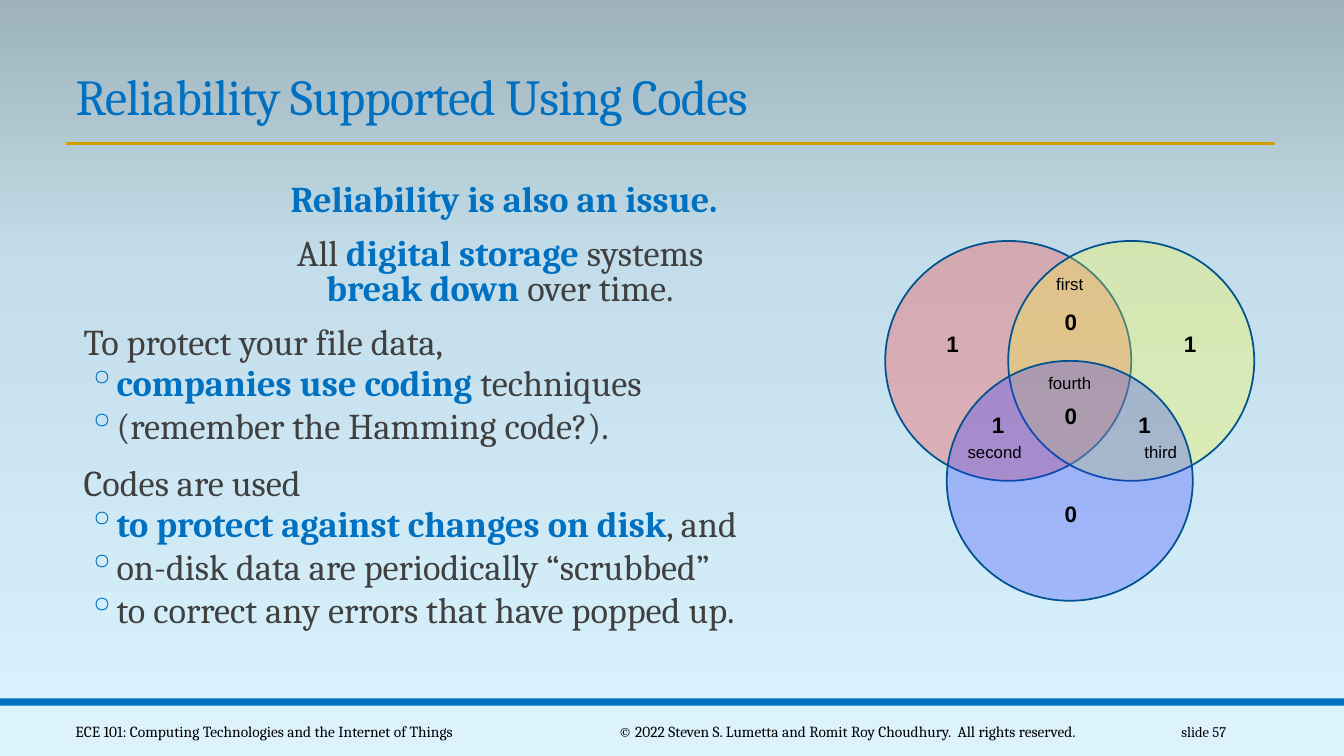
from copy import deepcopy
from dataclasses import dataclass

from lxml import etree
from pptx import Presentation
from pptx.dml.color import RGBColor
from pptx.enum.shapes import MSO_CONNECTOR, MSO_SHAPE
from pptx.enum.text import MSO_ANCHOR, MSO_AUTO_SIZE, PP_ALIGN
from pptx.oxml.ns import qn
from pptx.util import Inches, Pt

LEFT, CENTER, RIGHT = PP_ALIGN.LEFT, PP_ALIGN.CENTER, PP_ALIGN.RIGHT
MIDDLE, BOTTOM = MSO_ANCHOR.MIDDLE, MSO_ANCHOR.BOTTOM
NO_AUTOFIT = MSO_AUTO_SIZE.NONE
RECTANGLE, OVAL = MSO_SHAPE.RECTANGLE, MSO_SHAPE.OVAL
STRAIGHT = MSO_CONNECTOR.STRAIGHT


@dataclass(frozen=True)
class Theme:
    serif: str = "Cambria"
    sans: str = "Arial"
    accent: str = "0070C0"
    body: str = "404040"
    black: str = "000000"
    rule: str = "D09E00"
    footer: str = "DCF3FD"
    outline: str = "00538E"
    background: tuple = ((0, "DAF4FF"), (0.65, "C3DEEA"), (1, "9DB2BA"))
    title_size: float = 36
    body_size: float = 25.9
    footer_size: float = 11
    number_size: float = 10.5
    bit_size: float = 16
    label_size: float = 12


THEME = Theme()
WIDTH, HEIGHT = 13.33, 7.5
MARGIN = 0.65
FOOTER_TOP = 7.0
BAND = 0.07
RADIUS_X, RADIUS_Y = 1.22, 1.19
VENN_X, VENN_Y = 10.61, 3.58

CIRCLES = [(-0.5, 0, "FE3232"), (0.5, 0, "FBFB35"), (0, 1, "313BFF")]
BITS = [
    ("1", -0.96, -0.14), ("1", 0.97, -0.14), ("0", 0, 1.27),
    ("1", -0.59, 0.53), ("1", 0.6, 0.53), ("0", 0, 0.46), ("0", 0, -0.33),
]
LABELS = [
    ("first", 0, -0.64, 0.5), ("second", -0.61, 0.76, 0.87),
    ("third", 0.74, 0.76, 0.58), ("fourth", 0, 0.18, 0.71),
]
BODY = [
    ("center", "**Reliability is also an issue.**"),
    ("center", "All **digital storage **systems \v**break down **over time."),
    ("lead", "To protect your file data,"),
    ("bullet", "**companies use coding** techniques"),
    ("bullet", "(remember the Hamming code?)."),
    ("lead", "Codes are used"),
    ("bullet", "**to protect against changes on disk**, and"),
    ("bullet", "on-disk data are periodically “scrubbed”"),
    ("bullet", "to correct any errors that have popped up."),
]
FOOTERS = [
    ("slide 57", 10.83, 1.43, RIGHT, THEME.number_size),
    ("ECE 101: Computing Technologies and the Internet of Things",
     MARGIN, 4.58, LEFT, THEME.footer_size),
    ("© 2022 Steven S. Lumetta and Romit Roy Choudhury.  All rights reserved.",
     5.46, 5.89, CENTER, THEME.footer_size),
]


def rgb(value):
    return RGBColor.from_string(value)


def set_font(font, size, color, name=THEME.serif, bold=False):
    font.name, font.size, font.bold = name, Pt(size), bold
    font.color.rgb = rgb(color)


def paint_background(slide):
    fill = slide.background.fill
    fill.gradient()
    fill.gradient_angle = 90
    stop_list = slide.element.find(".//" + qn("a:gsLst"))
    stop_list.append(deepcopy(stop_list[0]))
    for stop, (position, color) in zip(fill.gradient_stops, THEME.background):
        stop.position = position
        stop.color.rgb = rgb(color)


def add_filled(shapes, kind, left, top, width, height, color):
    shape = shapes.add_shape(kind, Inches(left), Inches(top), Inches(width), Inches(height))
    shape.shadow.inherit = False
    shape.fill.solid()
    shape.fill.fore_color.rgb = rgb(color)
    shape.line.fill.background()
    return shape


def add_rule(slide, left, right, top):
    rule = slide.shapes.add_connector(
        STRAIGHT, Inches(left), Inches(top), Inches(right), Inches(top))
    rule.line.color.rgb = rgb(THEME.rule)
    rule.line.width = Pt(2)
    etree.SubElement(rule.element.spPr, qn("a:effectLst"))


def format_title(slide, text):
    title = slide.shapes.title
    title.left, title.top = Inches(MARGIN), Inches(0.59)
    title.width, title.height = Inches(WIDTH - 2 * MARGIN), Inches(0.71)
    frame = title.text_frame
    frame.text = text
    frame.auto_size = NO_AUTOFIT
    frame.vertical_anchor = BOTTOM
    paragraph = frame.paragraphs[0]
    paragraph.alignment = LEFT
    paragraph.line_spacing = 0.85
    set_font(paragraph.font, THEME.title_size, THEME.accent)
    paragraph.runs[0].font.size = Pt(THEME.title_size)
    paragraph.runs[0].font._element.set("spc", "-50")


def add_bullet(paragraph, symbol, margin, indent):
    properties = paragraph._p.get_or_add_pPr()
    properties.set("marL", str(Inches(margin)))
    properties.set("indent", str(Inches(-indent)))
    color = etree.SubElement(properties, qn("a:buClr"))
    etree.SubElement(color, qn("a:srgbClr")).set("val", THEME.accent)
    etree.SubElement(properties, qn("a:buChar")).set("char", symbol)


def add_marked_runs(paragraph, text):
    for index, part in enumerate(text.split("**")):
        strong = index % 2 == 1
        for line_index, piece in enumerate(part.split("\v")):
            if line_index:
                paragraph.add_line_break()
            if piece:
                run = paragraph.add_run()
                run.text = piece
                run.font.bold = strong
                run.font.color.rgb = rgb(THEME.accent if strong else THEME.body)


def add_body(slide):
    box = slide.shapes.add_textbox(Inches(MARGIN), Inches(1.78), Inches(8.52), Inches(4.64))
    frame = box.text_frame
    frame.word_wrap = True
    frame.margin_left = frame.margin_right = 0
    for index, (kind, text) in enumerate(BODY):
        paragraph = frame.paragraphs[0] if index == 0 else frame.add_paragraph()
        bulleted = kind == "bullet"
        if bulleted:
            paragraph.level = 1
            add_bullet(paragraph, "◦", 0.42, 0.2)
        else:
            add_bullet(paragraph, " ", 0.1, 0.1)
        paragraph.alignment = CENTER if kind == "center" else LEFT
        paragraph.line_spacing = 0.8
        if index:
            paragraph.space_before = Pt(2 if bulleted else 12)
        paragraph.space_after = Pt(4 if bulleted else 2)
        set_font(paragraph.font, THEME.body_size, THEME.body)
        add_marked_runs(paragraph, text)


def add_text(shapes, text, left, top, width, height, alignment, wrap=True, **font):
    box = shapes.add_textbox(Inches(left), Inches(top), Inches(width), Inches(height))
    frame = box.text_frame
    frame.text = text
    frame.word_wrap = wrap
    frame.vertical_anchor = MIDDLE
    paragraph = frame.paragraphs[0]
    paragraph.alignment = alignment
    set_font(paragraph.font, color=THEME.black, **font)


def add_venn_text(shapes, text, column, row, width, height, **font):
    left = VENN_X + column * RADIUS_X - width / 2
    top = VENN_Y + row * RADIUS_Y - height / 2
    add_text(shapes, text, left, top, width, height, CENTER,
             wrap=False, name=THEME.sans, **font)


def add_venn(slide):
    shapes = slide.shapes.add_group_shape().shapes
    for column, row, color in CIRCLES:
        circle = add_filled(
            shapes, OVAL, VENN_X + (column - 1) * RADIUS_X, VENN_Y + (row - 1) * RADIUS_Y,
            2 * RADIUS_X, 2 * RADIUS_Y, color)
        fill_color = circle.element.spPr.find(qn("a:solidFill"))[0]
        etree.SubElement(fill_color, qn("a:alpha")).set("val", "30000")
        circle.line.color.rgb = rgb(THEME.outline)
        circle.line.width = Pt(1.25)
    for text, column, row in BITS:
        add_venn_text(shapes, text, column, row, 0.3, 0.37, size=THEME.bit_size, bold=True)
    for text, column, row, width in LABELS:
        add_venn_text(shapes, text, column, row, width, 0.3, size=THEME.label_size)


def main():
    presentation = Presentation()
    presentation.slide_width, presentation.slide_height = Inches(WIDTH), Inches(HEIGHT)
    slide = presentation.slides.add_slide(presentation.slide_layouts[5])
    paint_background(slide)
    add_filled(slide.shapes, RECTANGLE, 0, FOOTER_TOP, WIDTH, HEIGHT - FOOTER_TOP, THEME.footer)
    add_filled(slide.shapes, RECTANGLE, 0, FOOTER_TOP - BAND, WIDTH, BAND, THEME.accent)
    add_rule(slide, MARGIN, 12.65, 1.42)
    format_title(slide, "Reliability Supported Using Codes")
    add_body(slide)
    for text, left, width, alignment, size in FOOTERS:
        add_text(slide.shapes, text, left, 7.06, width, 0.4, alignment, size=size)
    add_venn(slide)
    presentation.save("out.pptx")


if __name__ == "__main__":
    main()
